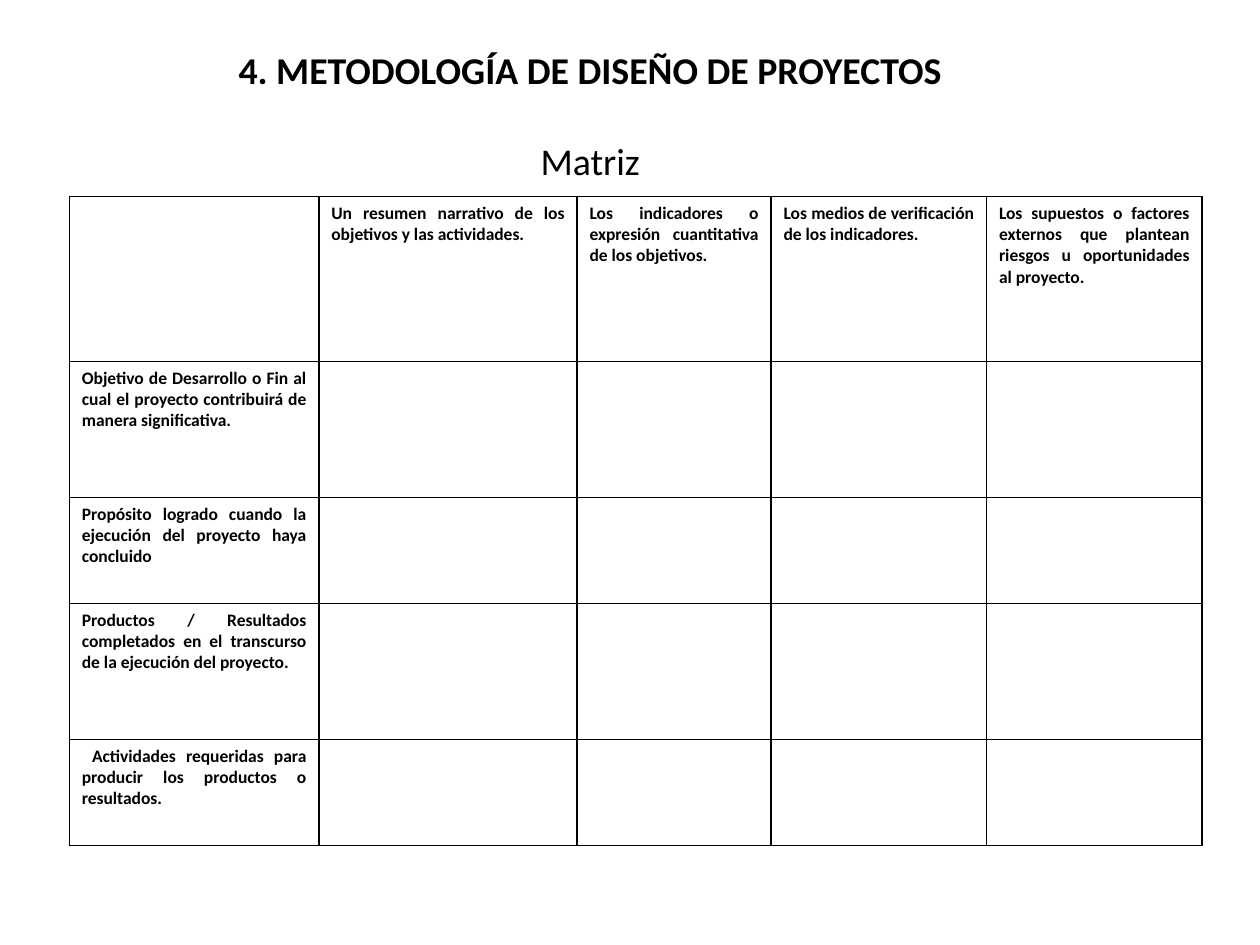
import pptx
import pptx.dml.color
import pptx.enum.text
import pptx.oxml.ns
import pptx.util
from lxml import etree

# Content
HEADING = [("4. METODOLOGÍA DE DISEÑO DE PROYECTOS", True), ("Matriz", False)]
COLUMN_HEADS = [
    "Un resumen narrativo de los objetivos y las actividades.",
    "Los indicadores o expresión cuantitativa de los objetivos.",
    "Los medios de verificación de los indicadores.",
    "Los supuestos o factores externos que plantean riesgos u oportunidades al proyecto.",
]
ROW_HEADS = [
    "Objetivo de Desarrollo o Fin al cual el proyecto contribuirá de manera significativa.",
    "Propósito logrado cuando la ejecución del proyecto haya concluido",
    "Productos / Resultados completados en el transcurso de la ejecución del proyecto.",
    " Actividades requeridas para producir los productos o resultados.",
]

# Layout, in inches and points
SLIDE_WIDTH, SLIDE_HEIGHT = 10, 7.5
HEADING_BOX = (0.3, 0.41, 8.77, 1)
TABLE_LEFT, TABLE_TOP = 0.55, 1.56
COLUMN_WIDTHS = [1.98, 2.05, 1.54, 1.71, 1.71]
ROW_HEIGHTS = [1.31, 1.08, 0.84, 1.08, 0.84]
HEADING_SIZE, HEADING_GAP, CELL_SIZE, BORDER_WIDTH = 21.6, 26, 10, 1
FONT = "Calibri"
COLORS = {"text": "000000", "border": "000000"}


def add_text(paragraph, text, size, bold, alignment):
    paragraph.alignment = alignment
    run = paragraph.add_run()
    run.text = text
    run.font.name = FONT
    run.font.size = pptx.util.Pt(size)
    run.font.bold = bold
    run.font.color.rgb = pptx.dml.color.RGBColor.from_string(COLORS["text"])


def add_borders(cell):
    properties = cell._tc.get_or_add_tcPr()
    for side in ("lnL", "lnR", "lnT", "lnB"):
        line = etree.SubElement(properties, pptx.oxml.ns.qn(f"a:{side}"),
                                w=str(pptx.util.Pt(BORDER_WIDTH)))
        fill = etree.SubElement(line, pptx.oxml.ns.qn("a:solidFill"))
        etree.SubElement(fill, pptx.oxml.ns.qn("a:srgbClr"), val=COLORS["border"])


def add_heading(slide):
    box = slide.shapes.add_textbox(*map(pptx.util.Inches, HEADING_BOX))
    frame = box.text_frame
    frame.word_wrap = True
    frame.vertical_anchor = pptx.enum.text.MSO_ANCHOR.MIDDLE
    for index, (text, bold) in enumerate(HEADING):
        paragraph = frame.add_paragraph() if index else frame.paragraphs[0]
        if index:
            paragraph.space_before = pptx.util.Pt(HEADING_GAP)
        add_text(paragraph, text, HEADING_SIZE, bold, pptx.enum.text.PP_ALIGN.CENTER)


def add_matrix(slide):
    bounds = (TABLE_LEFT, TABLE_TOP, sum(COLUMN_WIDTHS), sum(ROW_HEIGHTS))
    table = slide.shapes.add_table(len(ROW_HEIGHTS), len(COLUMN_WIDTHS),
                                   *map(pptx.util.Inches, bounds)).table
    table.first_row = table.horz_banding = False
    for column, width in zip(table.columns, COLUMN_WIDTHS):
        column.width = pptx.util.Inches(width)
    for row, height in zip(table.rows, ROW_HEIGHTS):
        row.height = pptx.util.Inches(height)

    # Borders on every cell, no fill
    for cell in table.iter_cells():
        add_borders(cell)
        cell.fill.background()

    # Heads along the first row and down the first column
    heads = [(0, column, text) for column, text in enumerate(COLUMN_HEADS, 1)]
    heads += [(row, 0, text) for row, text in enumerate(ROW_HEADS, 1)]
    for row, column, text in heads:
        paragraph = table.cell(row, column).text_frame.paragraphs[0]
        add_text(paragraph, text, CELL_SIZE, True, pptx.enum.text.PP_ALIGN.JUSTIFY)


def main():
    presentation = pptx.Presentation()
    presentation.slide_width = pptx.util.Inches(SLIDE_WIDTH)
    presentation.slide_height = pptx.util.Inches(SLIDE_HEIGHT)
    slide = presentation.slides.add_slide(presentation.slide_layouts[6])
    add_heading(slide)
    add_matrix(slide)
    presentation.save("out.pptx")


if __name__ == "__main__":
    main()
